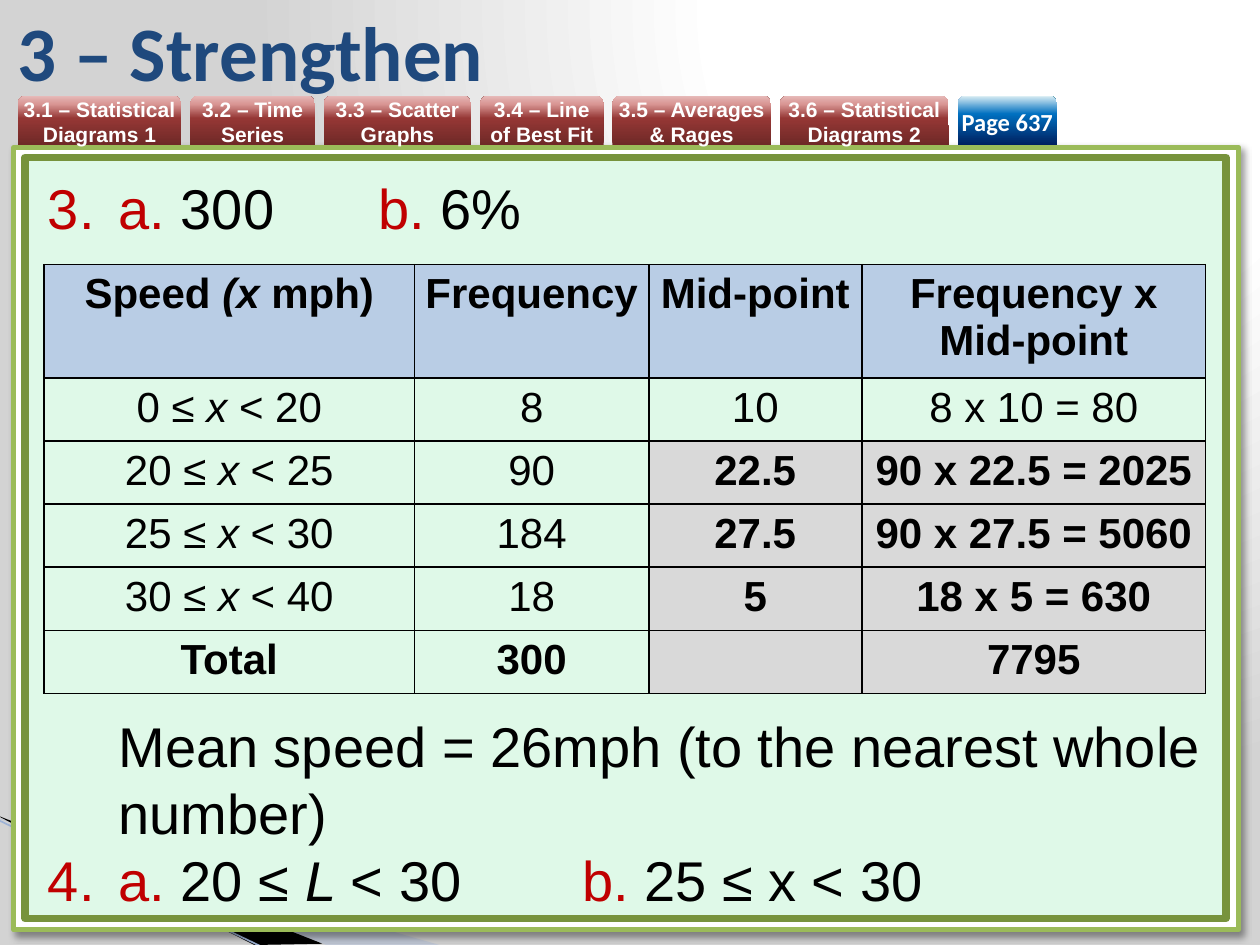
from dataclasses import dataclass

from lxml import etree
from pptx import Presentation
from pptx.dml.color import RGBColor
from pptx.enum.shapes import MSO_CONNECTOR, MSO_SHAPE
from pptx.enum.text import MSO_ANCHOR, MSO_AUTO_SIZE, PP_ALIGN
from pptx.oxml.ns import qn
from pptx.util import Emu, Inches, Pt

RECTANGLE = MSO_SHAPE.RECTANGLE
TAB_SHAPE = MSO_SHAPE.ROUND_2_SAME_RECTANGLE
STRAIGHT = MSO_CONNECTOR.STRAIGHT
TOP, MIDDLE = MSO_ANCHOR.TOP, MSO_ANCHOR.MIDDLE
LEFT, CENTER = PP_ALIGN.LEFT, PP_ALIGN.CENTER
GROW = MSO_AUTO_SIZE.SHAPE_TO_FIT_TEXT
COLUMNS, ROWS = 100, 75


@dataclass(frozen=True)
class Theme:
    heading_font: str = "Calibri"
    text_font: str = "Arial"
    title_size: float = 44
    answer_size: float = 32
    answer_line: float = 38.4
    table_size: float = 24
    page_size: float = 14
    tab_size: float = 12
    title: str = "1F497D"
    text: str = "000000"
    light: str = "FFFFFF"
    accent: str = "C00000"
    frame: str = "9BBB59"
    panel: str = "DFF9E8"
    panel_edge: str = "77933C"
    header: str = "B9CDE5"
    worked: str = "D9D9D9"
    swoosh: str = "A7B9DB"
    swoosh_edge: str = "9EB3D6"
    backdrop: tuple = ((0, "FFFFFF"), (40, "FFFFFF"), (100, "D3D3D3"))
    section_tab: tuple = ((0, "6F2927"), (54, "953735"), (83, "D99694"), (100, "E6B9B8"))
    page_tab: tuple = ((0, "002060"), (63, "0070C0"), (100, "DBEEF4"))


def rgb(value):
    return RGBColor.from_string(value)


def add_xml(parent, tag, **attributes):
    return etree.SubElement(parent, qn(tag), {k: str(v) for k, v in attributes.items()})


def add_color(parent, value, alpha=None):
    color = add_xml(parent, "a:srgbClr", val=value)
    if alpha is not None:
        add_xml(color, "a:alpha", val=alpha * 1000)


def fill_gradient(fill, owner, stops):
    """Give the fill these stops and return its emptied gradient element."""
    fill.gradient()
    gradient = owner.find(".//" + qn("a:gradFill"))
    gradient.clear()
    stop_list = add_xml(gradient, "a:gsLst")
    for position, color in stops:
        add_color(add_xml(stop_list, "a:gs", pos=position * 1000), color)
    return gradient


class SlideBuilder:
    def __init__(self, deck, theme):
        self.theme = theme
        self.slide = deck.slides.add_slide(deck.slide_layouts[1])
        self.shapes = self.slide.shapes
        self.column = deck.slide_width / COLUMNS
        self.row = deck.slide_height / ROWS

    def point(self, x, y):
        return Emu(round(x * self.column)), Emu(round(y * self.row))

    def box(self, x, y, width, height):
        return *self.point(x, y), *self.point(width, height)

    def style(self, font, face, size, color, bold=False):
        font.name, font.size, font.bold = face, Pt(size), bold
        font.color.rgb = rgb(color)

    def add_runs(self, paragraph, *parts):
        """Add runs; a part is plain text or a (text, "italic" or "accent") pair."""
        for part in parts:
            text, look = (part, None) if isinstance(part, str) else part
            run = paragraph.add_run()
            run.text = text
            if look == "italic":
                run.font.italic = True
            elif look == "accent":
                run.font.color.rgb = rgb(self.theme.accent)

    def background(self, stops):
        gradient = fill_gradient(self.slide.background.fill, self.slide.element, stops)
        circle = add_xml(gradient, "a:path")
        circle.set("path", "circle")
        add_xml(circle, "a:fillToRect", l=65000, b=98000)

    def polygon(self, points, color, alpha=100):
        start, *rest = [self.point(*p) for p in points]
        builder = self.shapes.build_freeform(*start)
        builder.add_line_segments(rest, close=True)
        shape = builder.convert_to_shape()
        shape.shadow.inherit = False
        shape.fill.solid()
        shape.fill.fore_color.rgb = rgb(color)
        add_xml(shape.element.find(".//" + qn("a:srgbClr")), "a:alpha", val=alpha * 1000)
        shape.line.fill.background()

    def line(self, start, end, color, width):
        connector = self.shapes.add_connector(STRAIGHT, *self.point(*start), *self.point(*end))
        connector.line.color.rgb = rgb(color)
        connector.line.width = Pt(width)
        add_xml(connector.element.spPr, "a:effectLst")

    def panel(self, area, fill, edge, width, shadow=False):
        shape = self.shapes.add_shape(RECTANGLE, *self.box(*area))
        shape.shadow.inherit = False
        shape.fill.solid()
        shape.fill.fore_color.rgb = rgb(fill)
        shape.line.color.rgb = rgb(edge)
        shape.line.width = Pt(width)
        if shadow:
            effects = shape.element.spPr.find(qn("a:effectLst"))
            outer = add_xml(effects, "a:outerShdw", blurRad=Pt(4), dist=Pt(3), dir=45 * 60000)
            add_color(outer, self.theme.text, 40)

    def tab(self, area, label, stops, face, size):
        shape = self.shapes.add_shape(TAB_SHAPE, *self.box(*area))
        shape.shadow.inherit = False
        gradient = fill_gradient(shape.fill, shape.element, stops)
        add_xml(gradient, "a:lin", ang=270 * 60000, scaled=0)
        shape.line.fill.background()
        frame = shape.text_frame
        frame.word_wrap, frame.vertical_anchor = True, MIDDLE
        frame.margin_left = frame.margin_right = frame.margin_top = frame.margin_bottom = 0
        paragraph = frame.paragraphs[0]
        paragraph.alignment = CENTER
        self.style(paragraph.font, face, size, self.theme.light, True)
        self.add_runs(paragraph, label)

    def place(self, placeholder, area, anchor):
        """Move a placeholder to the front and to its area."""
        placeholder.left, placeholder.top, placeholder.width, placeholder.height = self.box(*area)
        placeholder.element.getparent().append(placeholder.element)
        placeholder.text_frame.vertical_anchor = anchor
        return placeholder.text_frame

    def title(self, area, text):
        paragraph = self.place(self.shapes.title, area, MIDDLE).paragraphs[0]
        paragraph.alignment = LEFT
        self.style(paragraph.font, self.theme.heading_font, self.theme.title_size,
                   self.theme.title, True)
        self.add_runs(paragraph, text)

    def answers(self, area, items, tab_stops):
        """Fill the body with (number or None, lines of space before, parts)."""
        theme = self.theme
        frame = self.place(self.slide.placeholders[1], area, TOP)
        frame.auto_size = GROW
        for index, (number, gap, parts) in enumerate(items):
            paragraph = frame.add_paragraph() if index else frame.paragraphs[0]
            props = paragraph._p.get_or_add_pPr()
            props.set("marL", str(Inches(0.56)))
            props.set("indent", str(Inches(-0.56) if number else 0))
            if number:
                add_color(add_xml(props, "a:buClr"), theme.accent)
                add_xml(props, "a:buFont", typeface=theme.text_font)
                add_xml(props, "a:buAutoNum", type="arabicPeriod", startAt=number)
            else:
                add_xml(props, "a:buNone")
            stops = add_xml(props, "a:tabLst")
            for stop in tab_stops:
                add_xml(stops, "a:tab", pos=Inches(stop), algn="l")
            paragraph.line_spacing = Pt(theme.answer_line)
            paragraph.space_before = Pt(gap * theme.answer_line)
            self.style(paragraph.font, theme.text_font, theme.answer_size, theme.text)
            self.add_runs(paragraph, *parts)

    def table(self, corner, widths, heights, rows, is_worked):
        theme = self.theme
        area = self.box(*corner, sum(widths), sum(heights))
        table = self.shapes.add_table(len(rows), len(widths), *area).table
        table.first_row = table.horz_banding = False
        for column, width in zip(table.columns, widths):
            column.width = Emu(round(width * self.column))
        for r, (row, height) in enumerate(zip(rows, heights)):
            table.rows[r].height = Emu(round(height * self.row))
            for c, parts in enumerate(row):
                worked = is_worked(r, c)
                bold = worked or r in (0, len(rows) - 1)
                fill = theme.header if r == 0 else theme.worked if worked else None
                self.cell(table.cell(r, c), parts, bold, fill)

    def cell(self, cell, parts, bold, fill):
        theme = self.theme
        cell.margin_left = cell.margin_right = cell.margin_top = cell.margin_bottom = Inches(0.05)
        props = cell._tc.get_or_add_tcPr()
        for side in ("a:lnL", "a:lnR", "a:lnT", "a:lnB"):
            border = add_xml(props, side, w=Pt(1))
            add_color(add_xml(border, "a:solidFill"), theme.text)
        if fill:
            cell.fill.solid()
            cell.fill.fore_color.rgb = rgb(fill)
        else:
            cell.fill.background()
        paragraph = cell.text_frame.paragraphs[0]
        paragraph.alignment = CENTER
        self.style(paragraph.font, theme.text_font, theme.table_size, theme.text, bold)
        self.add_runs(paragraph, *([parts] if isinstance(parts, str) else parts))


def speed_class(low, high):
    return f"{low} ≤ ", ("x", "italic"), f" < {high}"


def main():
    deck = Presentation()
    deck.slide_width, deck.slide_height = Inches(10), Inches(7.5)
    theme = Theme()
    page = SlideBuilder(deck, theme)

    page.background(theme.backdrop)
    page.polygon([(-0.1, 65), (34.9, 75), (25.9, 75), (-0.1, 64.9)], theme.swoosh, 40)
    page.polygon([(0, 64.8), (25.6, 74.9), (20.2, 75), (0.1, 64.9)], theme.text)
    page.line((-0.1, 65.1), (20.9, 75.2), theme.swoosh_edge, 0.95)
    page.panel((1.1, 11.7, 97.2, 62.1), theme.light, theme.frame, 3, shadow=True)
    page.panel((2, 12.5, 95.3, 60.4), theme.panel, theme.panel_edge, 4.33)

    section = (theme.section_tab, theme.text_font, theme.tab_size)
    tabs = [
        (13, "3.1 – Statistical Diagrams 1", section),
        (9.9, "3.2 – Time Series", section),
        (11.7, "3.3 – Scatter Graphs", section),
        (9.8, "3.4 – Line of Best Fit", section),
        (12.6, "3.5 – Averages & Rages", section),
        (13.4, "3.6 – Statistical Diagrams 2", section),
        (7.9, "Page 637", (theme.page_tab, theme.heading_font, theme.page_size)),
    ]
    left = 1.4
    for width, label, look in tabs:
        page.tab((left, 7.6, width, 3.9), label, *look)
        left += width + 0.7

    page.title((0.4, 0.5, 84.3, 7.1), "3 – Strengthen")
    a, b = ("a. ", "accent"), ("b. ", "accent")
    page.answers((2.8, 13.3, 93.7, 60.2), [
        (3, 0, [a, "300\t", b, "6%"]),
        (None, 7, ["Mean speed = 26mph (to the nearest whole number)"]),
        (4, 0, [a, "20 ≤ ", ("L ", "italic"), "< 30 \t", b, "25 ≤ x < 30"]),
    ], (1.13, 2.62, 4.24, 6, 7.44))

    page.table((3.5, 21), (29.4, 18.6, 16.9, 27.3), [9] + [5] * 5, [
        (("Speed ", ("(x ", "italic"), "mph)"), "Frequency", "Mid-point", "Frequency x Mid-point"),
        (speed_class(0, 20), "8", "10", "8 x 10 = 80"),
        (speed_class(20, 25), "90", "22.5", "90 x 22.5 = 2025"),
        (speed_class(25, 30), "184", "27.5", "90 x 27.5 = 5060"),
        (speed_class(30, 40), "18", "5", "18 x 5 = 630"),
        ("Total", "300", (), "7795"),
    ], is_worked=lambda r, c: r > 1 and c > 1)
    deck.save("out.pptx")


if __name__ == "__main__":
    main()
